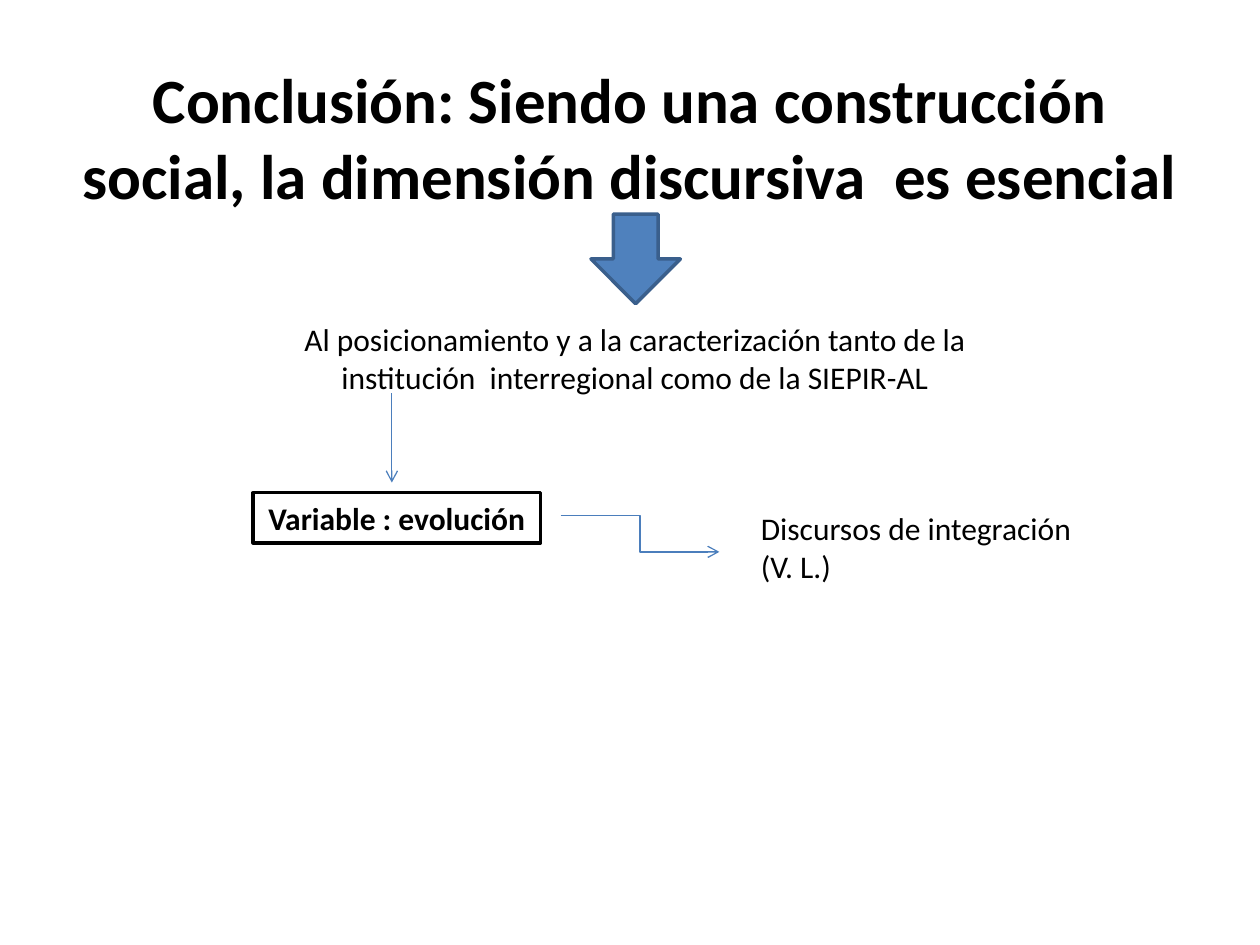
from dataclasses import dataclass
from typing import Optional

from lxml.etree import SubElement
from pptx import Presentation
from pptx.dml.color import RGBColor
from pptx.enum.shapes import MSO_CONNECTOR, MSO_SHAPE
from pptx.enum.text import MSO_ANCHOR, PP_ALIGN
from pptx.oxml.ns import qn
from pptx.util import Inches, Pt

WIDE, HIGH = Inches(10), Inches(7.5)
BLACK, WHITE = "000000", "FFFFFF"
BLUE, NAVY, STEEL = "4F81BD", "3A5F8C", "4B7EBC"
FONT = "Calibri"


@dataclass(frozen=True)
class Area:
    left: float
    top: float
    width: float
    height: float

    def frame(self) -> tuple:
        return across(self.left), down(self.top), across(self.width), down(self.height)


@dataclass(frozen=True)
class Label:
    area: Area
    lines: tuple
    size: int = 18
    bold: bool = False
    align: PP_ALIGN = PP_ALIGN.CENTER
    anchor: MSO_ANCHOR = MSO_ANCHOR.TOP
    border: Optional[str] = None


@dataclass(frozen=True)
class Link:
    kind: MSO_CONNECTOR
    start: tuple
    end: tuple


LABELS = (
    Label(Area(5, 4, 90, 20.8),
          ("Conclusión: Siendo una construcción social, la dimensión discursiva  es esencial",),
          size=36, bold=True, anchor=MSO_ANCHOR.MIDDLE),
    Label(Area(18.5, 33.2, 63.8, 9.47),
          ("Al posicionamiento y a la caracterización tanto de la",
           "institución  interregional como de la SIEPIR-AL")),
    Label(Area(20.1, 52.13, 22.8, 5.33), ("Variable : evolución",),
          bold=True, border=BLACK),
    Label(Area(59.4, 53.2, 27.6, 9.47), ("Discursos de integración", "(V. L.)"),
          align=PP_ALIGN.LEFT),
)
LINKS = (
    Link(MSO_CONNECTOR.STRAIGHT, (31.1, 41.6), (31.1, 51.07)),
    Link(MSO_CONNECTOR.ELBOW, (44.5, 54.53), (57.1, 58.4)),
)
ARROW = Area(46.9, 22.67, 7.1, 9.47)


def across(share: float) -> int:
    return round(WIDE * share / 100)


def down(share: float) -> int:
    return round(HIGH * share / 100)


def paint(fill, tone: str) -> None:
    fill.solid()
    fill.fore_color.rgb = RGBColor.from_string(tone)


def draw_shape(slide, kind: MSO_SHAPE, area: Area, tone: str, edge: str):
    shape = slide.shapes.add_shape(kind, *area.frame())
    shape.shadow.inherit = False
    paint(shape.fill, tone)
    paint(shape.line.fill, edge)
    shape.line.width = Pt(2)
    return shape


def draw_label(slide, label: Label) -> None:
    if label.border:
        box = draw_shape(slide, MSO_SHAPE.RECTANGLE, label.area, WHITE, label.border)
    else:
        box = slide.shapes.add_textbox(*label.area.frame())
    text = box.text_frame
    text.word_wrap = True
    text.vertical_anchor = label.anchor
    for index, line in enumerate(label.lines):
        para = text.add_paragraph() if index else text.paragraphs[0]
        para.alignment = label.align
        run = para.add_run()
        run.text = line
        run.font.name = FONT
        run.font.size = Pt(label.size)
        run.font.bold = label.bold
        paint(run.font.fill, BLACK)


def draw_link(slide, link: Link) -> None:
    (left, top), (right, base) = link.start, link.end
    line = slide.shapes.add_connector(
        link.kind, across(left), down(top), across(right), down(base))
    paint(line.line.fill, STEEL)
    line.line.width = Pt(0.75)
    props = line.element.spPr
    SubElement(props.find(qn("a:ln")), qn("a:tailEnd"), type="arrow")
    SubElement(props, qn("a:effectLst"))


def main() -> None:
    deck = Presentation()
    deck.slide_width, deck.slide_height = WIDE, HIGH
    slide = deck.slides.add_slide(deck.slide_layouts[6])
    paint(slide.background.fill, WHITE)
    for label in LABELS:
        draw_label(slide, label)
    for link in LINKS:
        draw_link(slide, link)
    draw_shape(slide, MSO_SHAPE.DOWN_ARROW, ARROW, BLUE, NAVY)
    deck.save("out.pptx")


if __name__ == "__main__":
    main()
